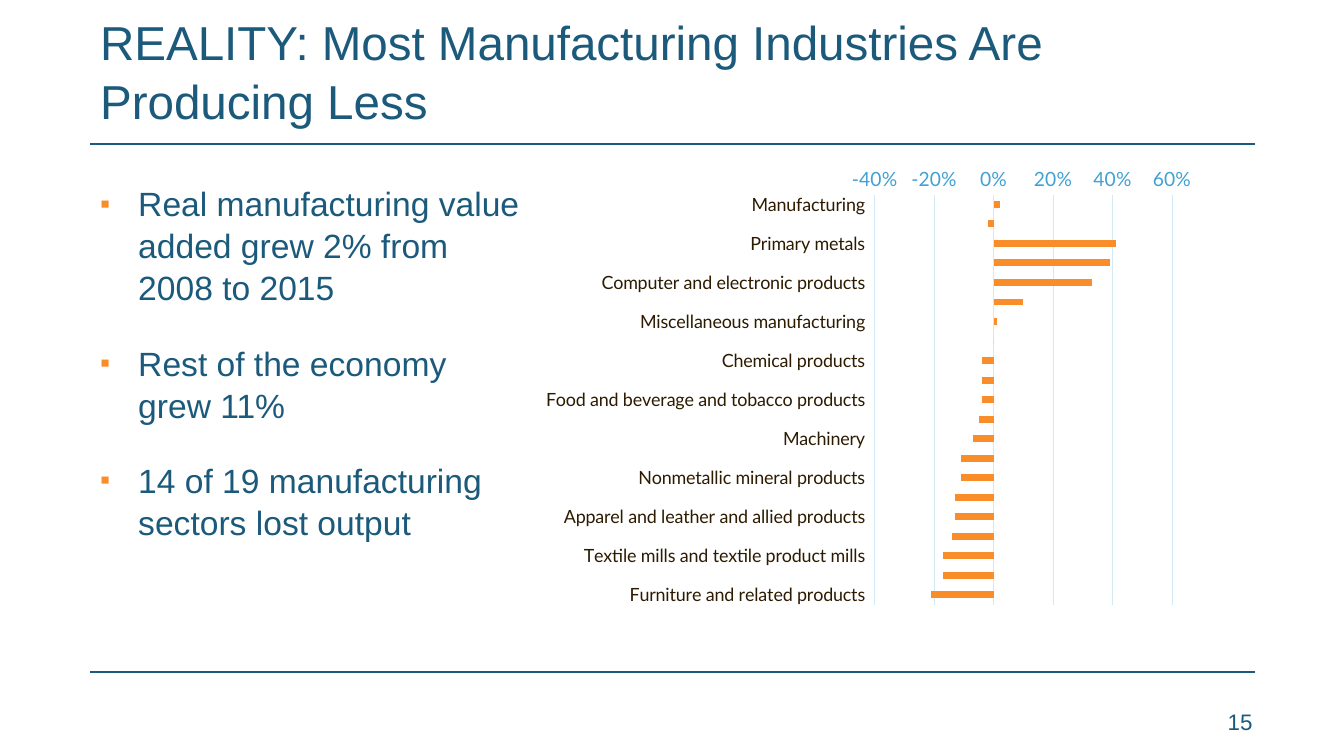
import dataclasses

import lxml.etree
import pptx
import pptx.chart.data
import pptx.dml.color
import pptx.enum.chart
import pptx.enum.shapes
import pptx.enum.text
import pptx.oxml
import pptx.oxml.ns
import pptx.util

Cm, Pt = pptx.util.Cm, pptx.util.Pt
qn = pptx.oxml.ns.qn


@dataclasses.dataclass(frozen=True)
class Theme:
    text: str = "1C5A7C"
    accent: str = "F98D29"
    label: str = "2D1B01"
    scale: str = "41A0D4"
    grid: str = "D3E9F5"
    face: str = "Arial"
    plot: str = "Lato"
    title: int = 34
    body: int = 24
    page: int = 16
    tick: int = 14
    name: int = 13
    base: int = 10


THEME = Theme()

POINTS = [
    "Real manufacturing value added grew 2% from 2008 to 2015",
    "Rest of the economy grew 11%",
    "14 of 19 manufacturing sectors lost output",
]

GROWTH = {
    "Manufacturing": 0.02,
    "Manufacturing minus computers": -0.02,
    "Primary metals": 0.41,
    "Motor vehicles, bodies and trailers, and parts": 0.39,
    "Computer and electronic products": 0.33,
    "Plastics and rubber products": 0.1,
    "Miscellaneous manufacturing": 0.01,
    "Petroleum and coal products": 0,
    "Chemical products": -0.04,
    "Other transportation equipment": -0.04,
    "Food and beverage and tobacco products": -0.04,
    "Wood products": -0.05,
    "Machinery": -0.07,
    "Fabricated metal products": -0.11,
    "Nonmetallic mineral products": -0.11,
    "Printing and related support activities": -0.13,
    "Apparel and leather and allied products": -0.13,
    "Paper products": -0.14,
    "Textile mills and textile product mills": -0.17,
    "Electrical equipment, appliances": -0.17,
    "Furniture and related products": -0.21,
}


def rgb(code):
    return pptx.dml.color.RGBColor.from_string(code)


def style(font, size, color=THEME.text, face=THEME.face):
    font.size, font.name = Pt(size), face
    font.color.rgb = rgb(color)


def place(shape, box):
    shape.left, shape.top, shape.width, shape.height = map(Cm, box)


def add_rule(slide, left, top, width):
    line = slide.shapes.add_connector(
        pptx.enum.shapes.MSO_CONNECTOR.STRAIGHT,
        Cm(left), Cm(top), Cm(left + width), Cm(top))
    line.line.color.rgb = rgb(THEME.text)
    line.line.width = Pt(1.25)
    lxml.etree.SubElement(line.element.spPr, qn("a:effectLst"))


def fill_title(slide, box, text):
    """Set the title with a rule just below its box."""
    left, top, width, height = box
    title = slide.shapes.title
    place(title, box)
    frame = title.text_frame
    frame.text = text
    frame.auto_size = pptx.enum.text.MSO_AUTO_SIZE.NONE
    frame.vertical_anchor = pptx.enum.text.MSO_ANCHOR.BOTTOM
    para = frame.paragraphs[0]
    para.alignment = pptx.enum.text.PP_ALIGN.LEFT
    para.line_spacing = 1.04
    style(para.font, THEME.title)
    add_rule(slide, left, top + height + 0.23, width)


def add_bullet(para):
    props = para._p.get_or_add_pPr()
    props.set("marL", str(Cm(0.96)))
    props.set("indent", str(-Cm(0.96)))
    tint = lxml.etree.SubElement(props, qn("a:buClr"))
    lxml.etree.SubElement(tint, qn("a:srgbClr"), val=THEME.accent)
    lxml.etree.SubElement(props, qn("a:buSzPct"), val="85000")
    lxml.etree.SubElement(props, qn("a:buFont"), typeface=THEME.face)
    lxml.etree.SubElement(props, qn("a:buChar"), char="▪")


def fill_body(slide, box, points):
    body = slide.placeholders[1]
    place(body, box)
    frame = body.text_frame
    frame.text = "\n".join(points)
    frame.auto_size = pptx.enum.text.MSO_AUTO_SIZE.NONE
    for para in frame.paragraphs:
        add_bullet(para)
        para.space_before, para.space_after = Pt(0), Pt(24)
        para.line_spacing = 1.04
        style(para.font, THEME.body)


def fix_plot(chart, **sides):
    """Pin the inner plot area, in fractions of the chart."""
    area = chart.element.find(".//" + qn("c:plotArea"))
    for old in area.findall(qn("c:layout")):
        area.remove(old)
    layout = lxml.etree.Element(qn("c:layout"))
    area.insert(0, layout)
    manual = lxml.etree.SubElement(layout, qn("c:manualLayout"))
    parts = {"layoutTarget": "inner", "xMode": "edge", "yMode": "edge", **sides}
    for tag, value in parts.items():
        lxml.etree.SubElement(manual, qn("c:" + tag), val=str(value))


def add_bars(slide, box, growth):
    data = pptx.chart.data.CategoryChartData(number_format="0%")
    data.categories = list(growth)
    data.add_series("Series 1", list(growth.values()))
    kind = pptx.enum.chart.XL_CHART_TYPE.BAR_CLUSTERED
    chart = slide.shapes.add_chart(kind, *map(Cm, box), data).chart
    chart.has_legend = chart.has_title = False
    style(chart.font, THEME.base, face=THEME.plot)
    fix_plot(chart, x=0.466, y=0.076, w=0.438, h=0.888)

    plot = chart.plots[0]
    plot.gap_width, plot.vary_by_categories = 182, False
    bars = plot.series[0]
    bars.invert_if_negative = False
    bars.format.fill.solid()
    bars.format.fill.fore_color.rgb = rgb(THEME.accent)

    names, scale = chart.category_axis, chart.value_axis
    for axis in (names, scale):
        axis.major_tick_mark = pptx.enum.chart.XL_TICK_MARK.NONE
        axis.minor_tick_mark = pptx.enum.chart.XL_TICK_MARK.NONE
    names.reverse_order = True
    names.has_major_gridlines = False
    names.tick_label_position = pptx.enum.chart.XL_TICK_LABEL_POSITION.LOW
    style(names.tick_labels.font, THEME.name, THEME.label, THEME.plot)

    scale.minimum_scale, scale.maximum_scale = -0.4, 0.6
    scale.major_unit = 0.2
    scale.has_major_gridlines = True
    scale.format.line.fill.background()
    scale.tick_labels.number_format = "0%"
    scale.tick_labels.number_format_is_linked = False
    style(scale.tick_labels.font, THEME.tick, THEME.scale, THEME.plot)

    for line in (names.format.line, scale.major_gridlines.format.line):
        line.color.rgb = rgb(THEME.grid)
        line.width = Pt(0.75)


def add_foot(slide, box, page):
    """Draw the lower rule and the page number at its right end."""
    left, top, width, height = box
    add_rule(slide, left, top, width)
    note = slide.shapes.add_textbox(
        Cm(left + width - 0.93), Cm(top + 0.79), Cm(1.27), Cm(height - 0.79))
    note.text_frame.word_wrap = True
    note.text_frame.text = page
    style(note.text_frame.paragraphs[0].font, THEME.page)


def main():
    deck = pptx.Presentation()
    deck.slide_width, deck.slide_height = Cm(33.87), Cm(19.05)
    slide = deck.slides.add_slide(deck.slide_layouts[1])
    left, width = 2.27, 29.35
    fill_title(slide, (left, 0.85, width, 2.54),
               "REALITY: Most Manufacturing Industries Are Producing Less")
    fill_body(slide, (left, 4.45, 11.28, 12.27), POINTS)
    add_bars(slide, (13.76, 4.02, 17.42, 11.64), GROWTH)
    add_foot(slide, (left, 16.93, width, 1.59), "15")
    deck.save("out.pptx")


if __name__ == "__main__":
    main()
